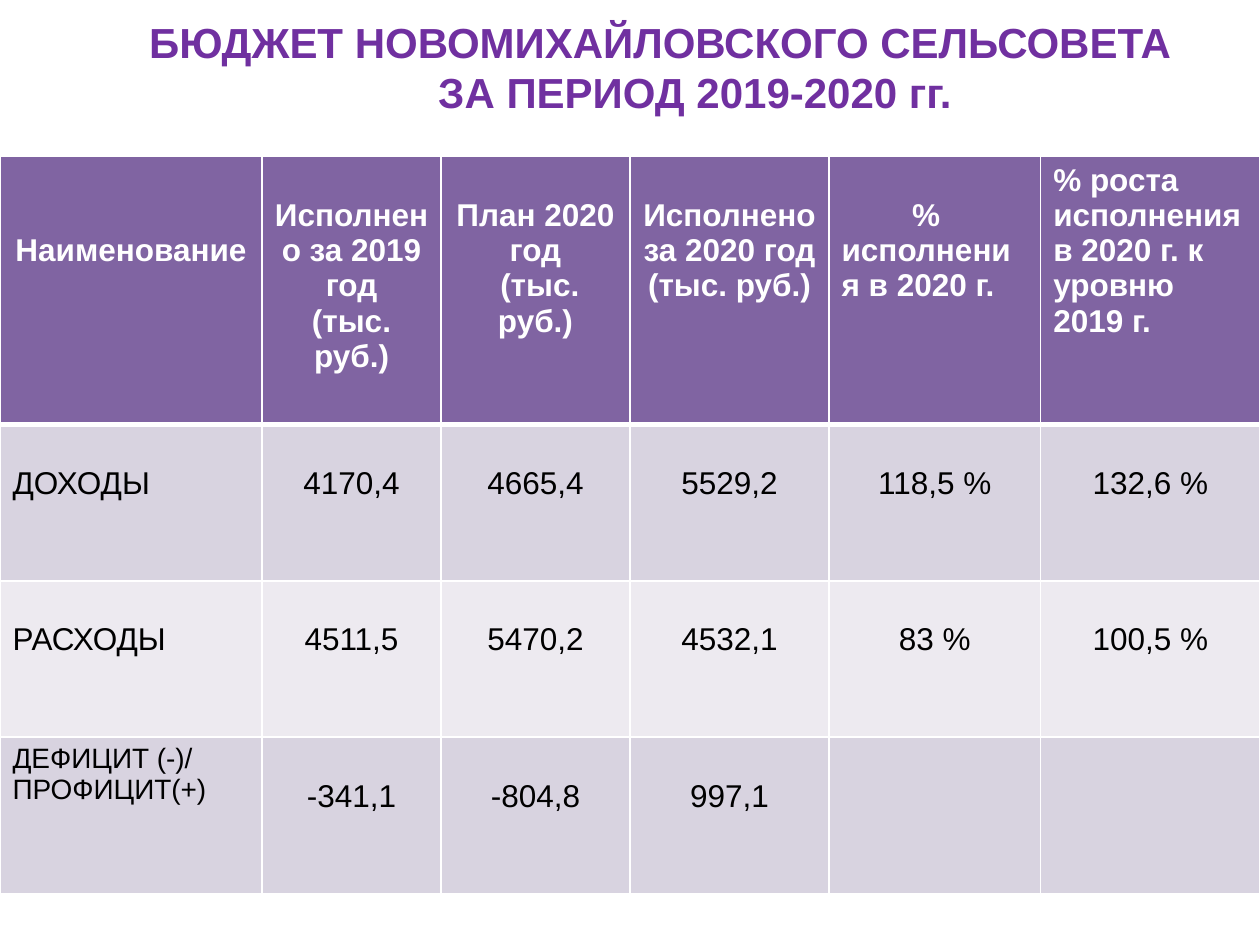
import pptx
import pptx.util
import pptx.dml.color
import pptx.enum.text
import pptx.oxml
import pptx.oxml.ns

Inches = pptx.util.Inches
Pt = pptx.util.Pt
CENTER = pptx.enum.text.PP_ALIGN.CENTER
LEFT = pptx.enum.text.PP_ALIGN.LEFT

COLORS = {
    "title": "7030A0",
    "header": "8064A2",
    "odd": "D8D3E0",
    "even": "EDEAF0",
    "white": "FFFFFF",
    "black": "000000",
}
FONT = "Arial"
TITLE = [
    ("БЮДЖЕТ НОВОМИХАЙЛОВСКОГО СЕЛЬСОВЕТА", 0.73),
    ("ЗА ПЕРИОД 2019-2020 гг.", 1.28),
]
ROWS = [
    [
        "Наименование",
        "Исполнено за 2019 год\n(тыс. руб.)",
        "План 2020 год\n (тыс. руб.)",
        "Исполнено за 2020 год (тыс. руб.)",
        "% исполнения в 2020 г.",
        "% роста исполнения в 2020 г. к уровню\n2019 г.",
    ],
    ["ДОХОДЫ", "4170,4", "4665,4", "5529,2", "118,5 %", "132,6 %"],
    ["РАСХОДЫ", "4511,5", "5470,2", "4532,1", "83 %", "100,5 %"],
    ["ДЕФИЦИТ (-)/\nПРОФИЦИТ(+)", "-341,1", "-804,8", "997,1", "", ""],
]
COLUMN_WIDTHS = [2.08, 1.42, 1.5, 1.58, 1.68, 1.74]
ROW_HEIGHTS = [2.13, 1.24, 1.24, 1.24]
LINE_HEIGHT = 0.28
LINES_ABOVE = {(0, 0): 2, (0, 5): 0, (3, 0): 0}
LEFT_ALIGNED = {(0, 4), (0, 5), (1, 0), (2, 0), (3, 0)}
FIRST_LINE_INDENT = {(0, 4): 0.56}
SMALL_TEXT = {(3, 0): 16}


def line_xml(tag, color, width):
    return pptx.oxml.parse_xml(
        f'<a:{tag} {pptx.oxml.ns.nsdecls("a")} w="{int(Pt(width))}">'
        f'<a:solidFill><a:srgbClr val="{COLORS[color]}"/></a:solidFill></a:{tag}>'
    )


def format_font(font, size, color, bold):
    font.name = FONT
    font.size = Pt(size)
    font.bold = bold
    font.color.rgb = pptx.dml.color.RGBColor.from_string(COLORS[color])


def add_title(slide):
    box = slide.shapes.add_textbox(0, Inches(0.08), Inches(9.75), Inches(0.91))
    frame = box.text_frame
    frame.word_wrap = True
    frame.auto_size = pptx.enum.text.MSO_AUTO_SIZE.SHAPE_TO_FIT_TEXT
    frame.text = "\n".join(text for text, indent in TITLE)
    for paragraph, (text, indent) in zip(frame.paragraphs, TITLE):
        paragraph.alignment = CENTER
        paragraph._p.get_or_add_pPr().set("marL", str(int(Inches(indent))))
        for run in paragraph.runs:
            format_font(run.font, 24, "title", True)
            run._r.get_or_add_rPr().insert(0, line_xml("ln", "title", 0.83))


def fill_cell(cell, position, text):
    row, column = position
    header = row == 0
    properties = cell._tc.get_or_add_tcPr()
    for side in "LRTB":
        thick = (row, side) in {(0, "B"), (1, "T")}
        properties.append(line_xml(f"ln{side}", "white", 3 if thick else 1))
    fill = "header" if header else "odd" if row % 2 else "even"
    cell.fill.solid()
    cell.fill.fore_color.rgb = pptx.dml.color.RGBColor.from_string(COLORS[fill])
    cell.margin_top = Inches(0.05 + LINES_ABOVE.get(position, 1) * LINE_HEIGHT)
    cell.text_frame.text = text
    for paragraph in cell.text_frame.paragraphs:
        paragraph.alignment = LEFT if position in LEFT_ALIGNED else CENTER
        if position in FIRST_LINE_INDENT:
            indent = Inches(FIRST_LINE_INDENT[position])
            paragraph._p.get_or_add_pPr().set("indent", str(int(indent)))
        for run in paragraph.runs:
            size = SMALL_TEXT.get(position, 18)
            format_font(run.font, size, "white" if header else "black", header)


def add_budget_table(slide):
    table = slide.shapes.add_table(
        len(ROWS), len(COLUMN_WIDTHS), 0, Inches(1.24),
        Inches(sum(COLUMN_WIDTHS)), Inches(sum(ROW_HEIGHTS)),
    ).table
    for column, width in zip(table.columns, COLUMN_WIDTHS):
        column.width = Inches(width)
    for row, height in zip(table.rows, ROW_HEIGHTS):
        row.height = Inches(height)
    for row, texts in enumerate(ROWS):
        for column, text in enumerate(texts):
            fill_cell(table.cell(row, column), (row, column), text)


def main():
    presentation = pptx.Presentation()
    presentation.slide_width = Inches(10)
    presentation.slide_height = Inches(7.5)
    slide = presentation.slides.add_slide(presentation.slide_layouts[6])
    add_title(slide)
    add_budget_table(slide)
    presentation.save("out.pptx")


if __name__ == "__main__":
    main()
